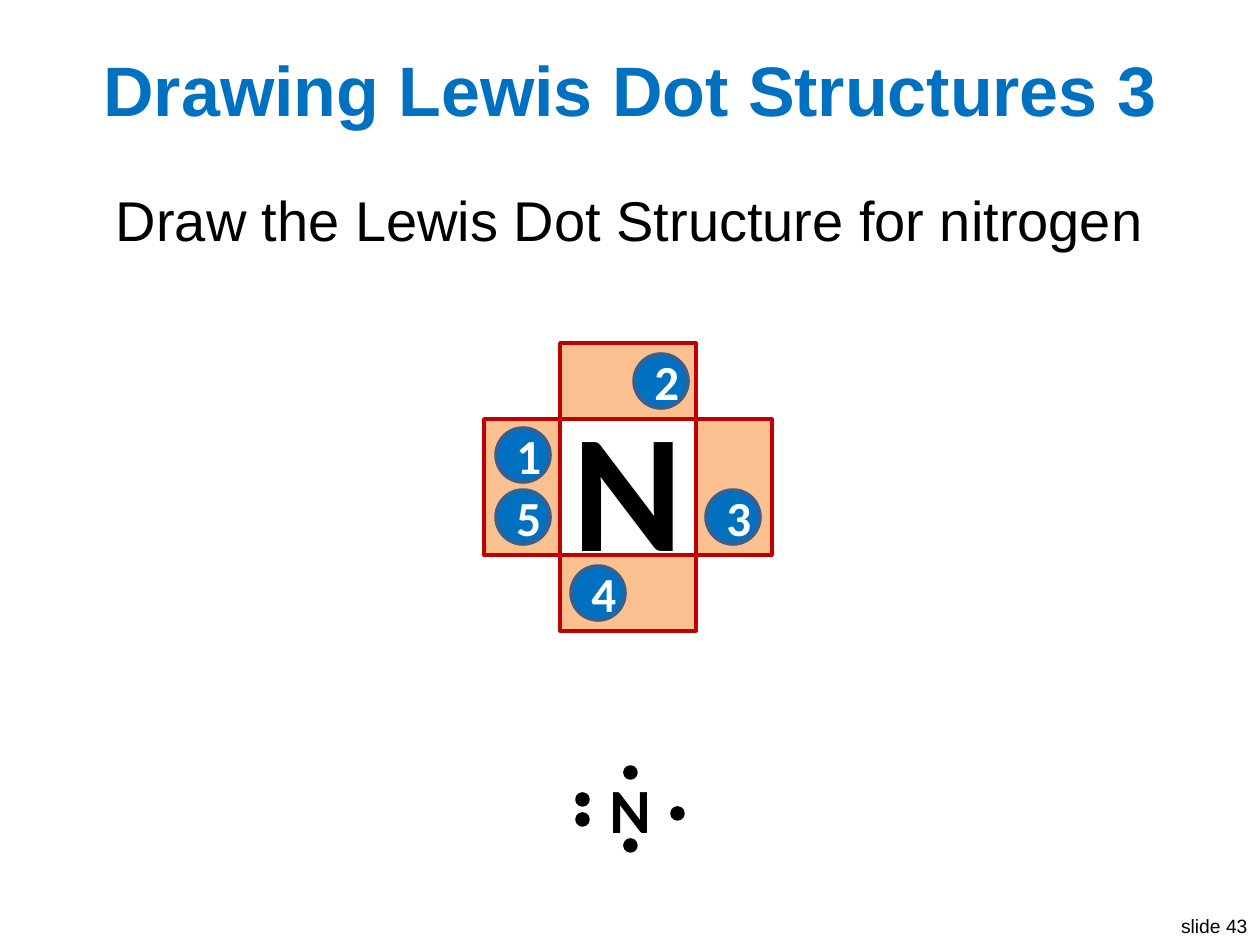
from dataclasses import dataclass

from pptx import Presentation
from pptx.dml import color
from pptx.enum import shapes, text
from pptx.util import Emu, Pt


@dataclass(frozen=True)
class Theme:
    head: str = "Arial"
    atom: str = "Calibri"
    blue: str = "0070C0"
    rim: str = "3A5F8C"
    peach: str = "FAC090"
    red: str = "C00000"
    black: str = "000000"
    white: str = "FFFFFF"
    title: int = 40
    body: int = 32
    foot: int = 11
    big: int = 96
    small: int = 36
    digit: int = 28
    line: int = 2


T = Theme()
SCALE = 914400 / 126
RECT = shapes.MSO_SHAPE.RECTANGLE
OVAL = shapes.MSO_SHAPE.OVAL
MID = text.PP_ALIGN.CENTER
RIGHT = text.PP_ALIGN.RIGHT


def px(*nums):
    return [Emu(round(n * SCALE)) for n in nums]


def rgb(code):
    return color.RGBColor.from_string(code)


def write(frame, words, font, size, tint, bold=False, align=MID):
    para = frame.paragraphs[0]
    para.text = words
    para.alignment = align
    para.font.name = font
    para.font.size = Pt(size)
    para.font.bold = bold
    para.font.color.rgb = rgb(tint)
    return para


def label(slide, box, words, *style, wrap=False, inset=True, **opts):
    frame = slide.shapes.add_textbox(*px(*box)).text_frame
    frame.word_wrap = wrap
    if not inset:
        frame.margin_left = frame.margin_right = 0
        frame.margin_top = frame.margin_bottom = 0
    return write(frame, words, *style, **opts)


def shape(slide, kind, box, fill, line):
    item = slide.shapes.add_shape(kind, *px(*box))
    item.shadow.inherit = False
    if fill:
        item.fill.solid()
        item.fill.fore_color.rgb = rgb(fill)
    else:
        item.fill.background()
    item.line.color.rgb = rgb(line)
    item.line.width = Pt(T.line)
    return item


def header(slide, box):
    left, top, width, height = box
    title = slide.shapes.title
    title.left, title.top, title.width, title.height = px(left, top, width, 101)
    title.text_frame.vertical_anchor = text.MSO_ANCHOR.MIDDLE
    write(title.text_frame, "Drawing Lewis Dot Structures 3",
          T.head, T.title, T.blue, bold=True)
    para = label(slide, (left, top + 141, width, height - 141),
                 "Draw the Lewis Dot Structure for nitrogen",
                 T.head, T.body, T.black, wrap=True)
    para.space_before = Pt(12)


def symbol(slide, box):
    left, top = box
    label(slide, (left + 32, top + 4, 42, 77), "N",
          T.atom, T.small, T.black, inset=False, bold=True)
    for x, y in ((48, 0), (48, 73), (0, 47), (0, 27), (95, 41)):
        shape(slide, OVAL, (left + x, top + y, 11, 11), T.black, T.black)


def cross(slide, box):
    left, top, side = box
    arm = 76
    core = side - 2 * arm
    far = arm + core
    for x, y, w, h in ((far, arm, arm, core), (arm, far, core, arm),
                       (0, arm, arm, core), (arm, 0, core, arm)):
        shape(slide, RECT, (left + x, top + y, w, h), T.peach, T.red)
    shape(slide, RECT, (left + arm, top + arm, core, core), None, T.red)
    for digit, x, y in (("1", 12, 85), ("5", 12, 147), ("3", 222, 147),
                        ("2", 150, 11), ("4", 87, 223)):
        ball = shape(slide, OVAL, (left + x, top + y, 54, 54), T.blue, T.rim)
        write(ball.text_frame, digit, T.atom, T.digit, T.white, bold=True)
    label(slide, (left + 88, top + 41, 112, 204), "N",
          T.atom, T.big, T.black, inset=False, bold=True)


def footer(slide, box):
    label(slide, box, "slide 43", T.head, T.foot, T.black, align=RIGHT)


def main():
    deck = Presentation()
    deck.slide_width, deck.slide_height = px(1260, 945)
    slide = deck.slides.add_slide(deck.slide_layouts[5])
    footer(slide, (1165, 908, 95, 37))
    header(slide, (25, 38, 1210, 292))
    symbol(slide, (577, 767))
    cross(slide, (484, 343, 288))
    deck.save("out.pptx")


if __name__ == "__main__":
    main()
